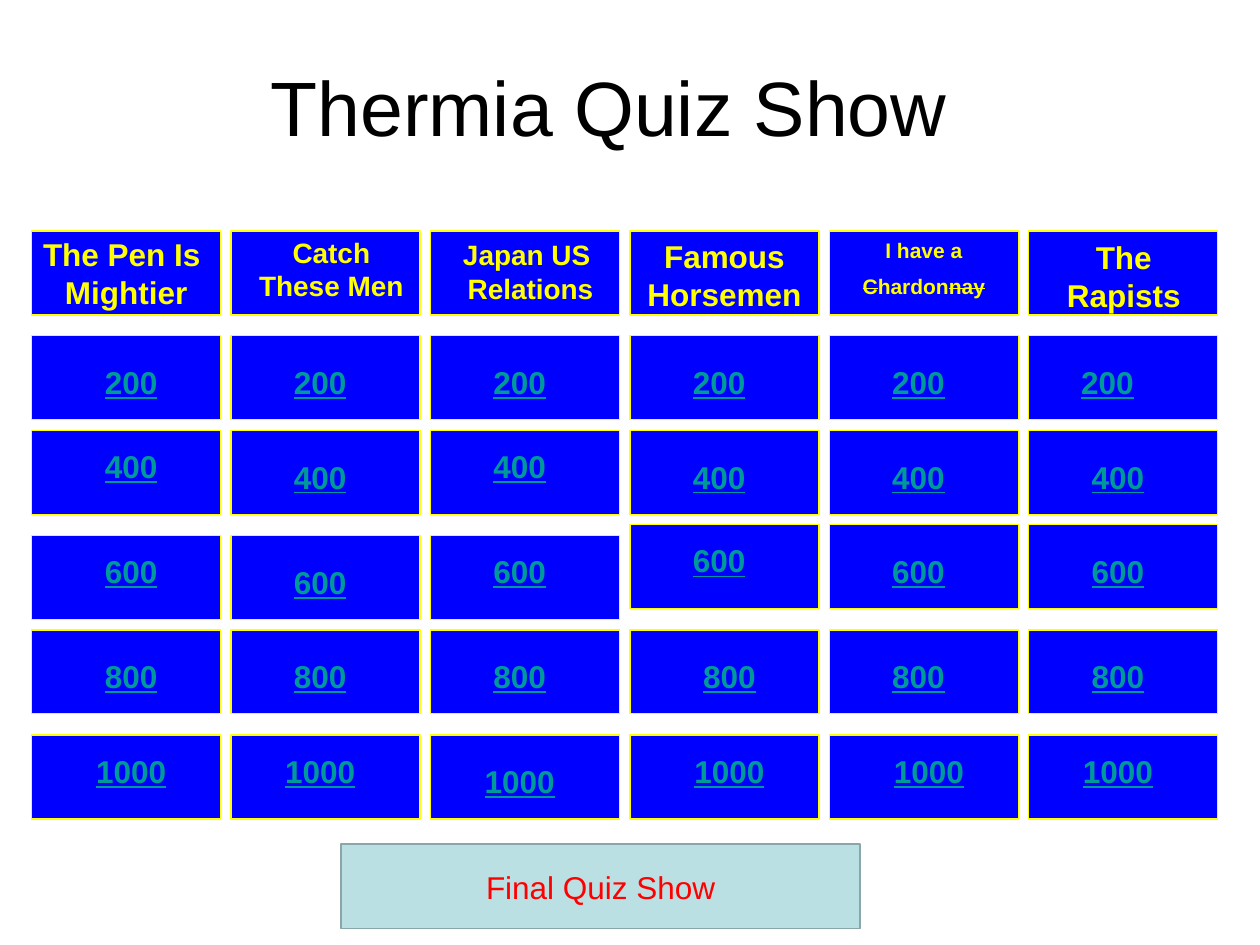
"""Build a quiz board with six categories and five rows of scores."""
from dataclasses import dataclass, field

from pptx import Presentation
from pptx import util as u
from pptx.dml.color import RGBColor
from pptx.enum import shapes, text

BLUE = RGBColor(0x00, 0x00, 0xFF)
YELLOW = RGBColor(0xFF, 0xFF, 0x00)
TEAL = RGBColor(0x00, 0x99, 0x99)
PALE = RGBColor(0xBB, 0xE0, 0xE3)
GREY = RGBColor(0x8A, 0xA6, 0xA8)
RED = RGBColor(0xFF, 0x00, 0x00)
BLACK = RGBColor(0x00, 0x00, 0x00)

COLUMNS = 6
LEFT, PITCH = 0.64, 4.02
CELL_W, CELL_H = 3.81, 1.69
HEADER_TOP = 4.66
SCORE_W, SCORE_H = 2.75, 1.02


@dataclass
class Category:
    lines: list[str]
    size: int
    left: float
    top: float
    width: float
    height: float


@dataclass
class ScoreRow:
    value: str
    tops: list[float]
    raised: set[int] = field(default_factory=set)
    nudges: dict[int, float] = field(default_factory=dict)


CATEGORIES = [
    Category(["Catch These Men"], 16, 4.88, 4.62, 3.6, 1.63),
    Category(["Japan US ", "Relations"], 16, 8.69, 4.67, 4.01, 1.63),
    Category(["Famous Horsemen"], 18, 12.7, 4.66, 3.81, 1.8),
    Category(["I have a"], 12, 16.93, 4.66, 3.39, 1.55),
    Category(["The Rapists"], 18, 20.96, 4.68, 3.39, 1.8),
]
WINE_PARTS = [("C", True), ("hardon", False), ("nay", True)]
SCORE_ROWS = [
    ScoreRow("200", [6.77] * 6, nudges={5: -0.21}),
    ScoreRow("400", [8.68] * 6, {0, 2}),
    ScoreRow("600", [10.8] * 3 + [10.58] * 3, {0, 2, 3}),
    ScoreRow("800", [12.7] * 6, nudges={3: 0.21}),
    ScoreRow("1000", [14.82] * 6, {0, 1, 3, 4, 5}, {3: 0.21, 4: 0.21}),
]


def column_left(column: int) -> float:
    return LEFT + column * PITCH


def add_run(p, words: str, size: int, color: RGBColor, bold: bool = True):
    r = p.add_run()
    r.text = words
    r.font.name = "Arial"
    r.font.size = u.Pt(size)
    r.font.bold = bold
    r.font.color.rgb = color
    return r


def add_paragraph(tf, first: bool):
    p = tf.paragraphs[0] if first else tf.add_paragraph()
    p.alignment = text.PP_ALIGN.CENTER
    return p


def add_lines(tf, lines: list[str], size: int) -> None:
    for i, line in enumerate(lines):
        add_run(add_paragraph(tf, i == 0), line, size, YELLOW)


def add_box(s, left: float, top: float, width: float, height: float,
            fill: RGBColor, line: RGBColor, weight: float):
    sp = s.shapes.add_shape(shapes.MSO_SHAPE.RECTANGLE, u.Cm(left), u.Cm(top),
                            u.Cm(width), u.Cm(height))
    sp.shadow.inherit = False
    sp.fill.solid()
    sp.fill.fore_color.rgb = fill
    sp.line.color.rgb = line
    sp.line.width = u.Pt(weight)
    sp.text_frame.vertical_anchor = text.MSO_ANCHOR.MIDDLE
    return sp


def add_cell(s, column: int, top: float):
    return add_box(s, column_left(column), top, CELL_W, CELL_H, BLUE, YELLOW, 0.75)


def add_text_frame(s, left: float, top: float, width: float, height: float):
    sp = s.shapes.add_textbox(u.Cm(left), u.Cm(top), u.Cm(width), u.Cm(height))
    tf = sp.text_frame
    tf.word_wrap = True
    tf.auto_size = text.MSO_AUTO_SIZE.SHAPE_TO_FIT_TEXT
    return tf


def add_title(s) -> None:
    sp = s.shapes.title
    sp.left, sp.top = u.Cm(1.06), u.Cm(0.85)
    sp.width, sp.height = u.Cm(22.86), u.Cm(3.18)
    tf = sp.text_frame
    tf.auto_size = text.MSO_AUTO_SIZE.NONE
    tf.vertical_anchor = text.MSO_ANCHOR.MIDDLE
    tf.margin_right, tf.margin_bottom = u.Cm(0.68), u.Cm(0.75)
    add_run(add_paragraph(tf, True), "Thermia Quiz Show", 44, BLACK, bold=False)


def add_categories(s) -> None:
    cells = [add_cell(s, column, HEADER_TOP) for column in range(COLUMNS)]
    tf = cells[0].text_frame
    tf.word_wrap = False
    add_lines(tf, ["The Pen Is ", "Mightier"], 18)
    for c in CATEGORIES:
        tf = add_text_frame(s, c.left, c.top, c.width, c.height)
        add_lines(tf, c.lines, c.size)
        if c.lines == ["I have a"]:
            p = add_paragraph(tf, False)
            p.space_before = u.Pt(6)
            for words, struck in WINE_PARTS:
                r = add_run(p, words, c.size, YELLOW)
                if struck:
                    r.font._element.set("strike", "sngStrike")


def add_scores(s, row: ScoreRow) -> None:
    for column, top in enumerate(row.tops):
        add_cell(s, column, top)
        left = column_left(column) + (0.63 if column == 0 else 0.42)
        left += row.nudges.get(column, 0)
        top += 0.21 if column in row.raised else 0.42
        tf = add_text_frame(s, left, top, SCORE_W, SCORE_H)
        r = add_run(add_paragraph(tf, True), row.value, 18, TEAL)
        r.font.underline = True


def main() -> None:
    prs = Presentation()
    prs.slide_width, prs.slide_height = u.Cm(25.4), u.Cm(19.05)
    s = prs.slides.add_slide(prs.slide_layouts[5])
    add_title(s)
    add_categories(s)
    for row in SCORE_ROWS:
        add_scores(s, row)
    sp = add_box(s, 6.88, 17.02, 10.46, 1.7, PALE, GREY, 1)
    p = add_paragraph(sp.text_frame, True)
    add_run(p, "Final Quiz Show", 18, RED, bold=False)
    prs.save("out.pptx")


if __name__ == "__main__":
    main()
